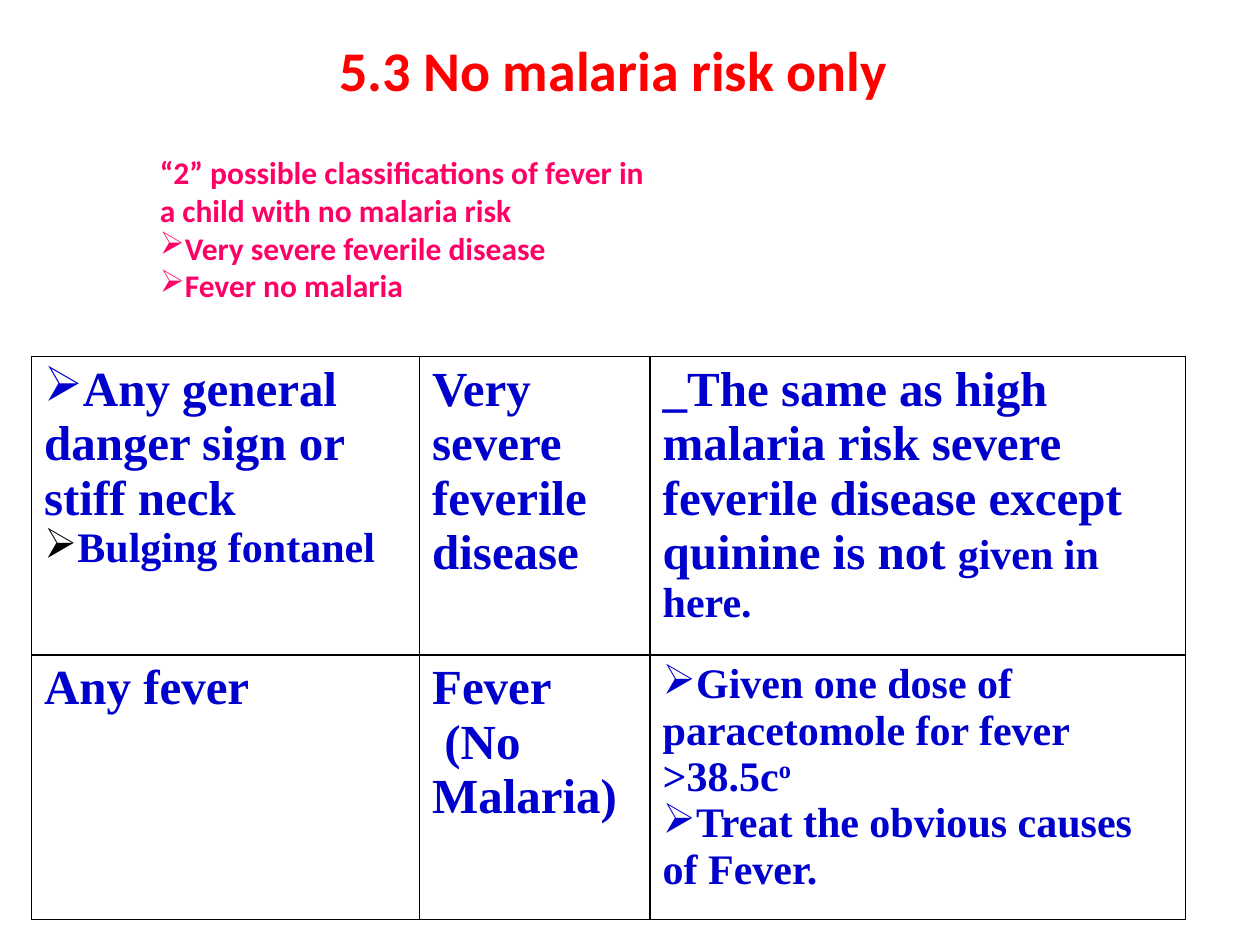
from lxml.etree import SubElement as Sub
from pptx import Presentation
from pptx.dml.color import RGBColor
from pptx.enum.text import MSO_ANCHOR as Anchor, PP_ALIGN as Align
from pptx.oxml.ns import qn
from pptx.util import Inches, Pt

RED = RGBColor(0xFF, 0x00, 0x00)
PINK = RGBColor(0xFF, 0x00, 0x66)
BLUE = RGBColor(0x00, 0x00, 0xCC)
BLACK = RGBColor(0x00, 0x00, 0x00)
SANS, SERIF = "Calibri", "Times New Roman"
BIG, SMALL = 28, 24
COLUMNS = (3.08, 1.83, 4.25)
ROWS = (2.36, 2.1)

SUMMARY = [
    ("“2” possible classifications of fever in", False),
    ("a child with no malaria risk", False),
    ("Very severe feverile disease", True),
    ("Fever no malaria", True),
]

CELLS = [
    [
        [([("Any general danger sign or stiff neck", BIG)], BLUE),
         ([("Bulging fontanel", SMALL)], BLACK)],
        [([("Very severe feverile disease", BIG)], None)],
        [([("_The same as high malaria risk severe feverile disease "
            "except quinine is not ", BIG), ("given in here.", SMALL)], None)],
    ],
    [
        [([("Any fever", BIG)], None)],
        [([("Fever", BIG)], None), ([(" (No Malaria)", BIG)], None)],
        [([("Given one dose of paracetomole for fever >38.5c", SMALL),
           ("o", SMALL, 30000)], BLUE),
         ([("Treat the obvious causes of Fever.", SMALL)], BLUE)],
    ],
]


def add_span(para, text, size, font, color, baseline=0):
    """Add one bold run to a paragraph."""
    span = para.add_run()
    span.text = text
    span.font.size, span.font.name, span.font.bold = Pt(size), font, True
    span.font.color.rgb = color
    if baseline:
        span.font._element.set("baseline", str(baseline))


def add_bullet(para, color):
    """Give a paragraph an arrow bullet that runs in line with its text."""
    props = para._p.get_or_add_pPr()
    props.set("marL", "0")
    props.set("indent", "0")
    Sub(Sub(props, qn("a:buClr")), qn("a:srgbClr"), val=str(color))
    Sub(props, qn("a:buChar"), char="➢")


def next_para(frame, index):
    """Return the first paragraph of a frame, or a new one after it."""
    return frame.add_paragraph() if index else frame.paragraphs[0]


def place(shape, left, top, width, height):
    """Set the position and size of a shape in inches."""
    shape.left, shape.top = Inches(left), Inches(top)
    shape.width, shape.height = Inches(width), Inches(height)


def add_title(page):
    """Fill the title placeholder, with the text in its upper half."""
    title = page.shapes.title
    place(title, 0.42, 0.17, 9, 1.25)
    frame = title.text_frame
    frame.vertical_anchor = Anchor.MIDDLE
    frame.margin_bottom, frame.margin_right = Inches(0.54), Inches(0.2)
    para = frame.paragraphs[0]
    para.alignment = Align.CENTER
    add_span(para, "5.3 No malaria risk only", 32, SANS, RED)


def add_summary(page):
    """Add the list of possible classifications."""
    box = page.shapes.add_textbox(0, 0, 0, 0)
    place(box, 1.17, 0.83, 7.36, 1.97)
    frame = box.text_frame
    frame.word_wrap = True
    frame.vertical_anchor = Anchor.MIDDLE
    for index, (text, bulleted) in enumerate(SUMMARY):
        para = next_para(frame, index)
        if bulleted:
            add_bullet(para, PINK)
        add_span(para, text, 18, SANS, PINK)


def add_borders(cell):
    """Draw a thin black line on all four sides of a cell."""
    props = cell._tc.get_or_add_tcPr()
    for index, side in enumerate(("lnL", "lnR", "lnT", "lnB")):
        line = props.makeelement(qn(f"a:{side}"), {"w": str(Pt(1))})
        Sub(Sub(line, qn("a:solidFill")), qn("a:srgbClr"), val=str(BLACK))
        props.insert(index, line)


def fill_cell(cell, paras):
    """Write the paragraphs of one table cell."""
    cell.fill.background()
    add_borders(cell)
    for index, (spans, bullet_color) in enumerate(paras):
        para = next_para(cell.text_frame, index)
        if bullet_color is not None:
            add_bullet(para, bullet_color)
        for text, size, *baseline in spans:
            add_span(para, text, size, SERIF, BLUE, *baseline)


def add_classification_table(page):
    """Add the table of signs, classifications and treatments."""
    table = page.shapes.add_table(
        len(ROWS), len(COLUMNS), Inches(0.25), Inches(2.83),
        Inches(sum(COLUMNS)), Inches(sum(ROWS))).table
    table.first_row = table.horz_banding = False
    for column, width in zip(table.columns, COLUMNS):
        column.width = Inches(width)
    for row, height, contents in zip(table.rows, ROWS, CELLS):
        row.height = Inches(height)
        for cell, paras in zip(row.cells, contents):
            fill_cell(cell, paras)


def main():
    """Build and save the deck."""
    deck = Presentation()
    deck.slide_width, deck.slide_height = Inches(10), Inches(7.5)
    page = deck.slides.add_slide(deck.slide_layouts[5])
    add_title(page)
    add_summary(page)
    add_classification_table(page)
    deck.save("out.pptx")


if __name__ == "__main__":
    main()
